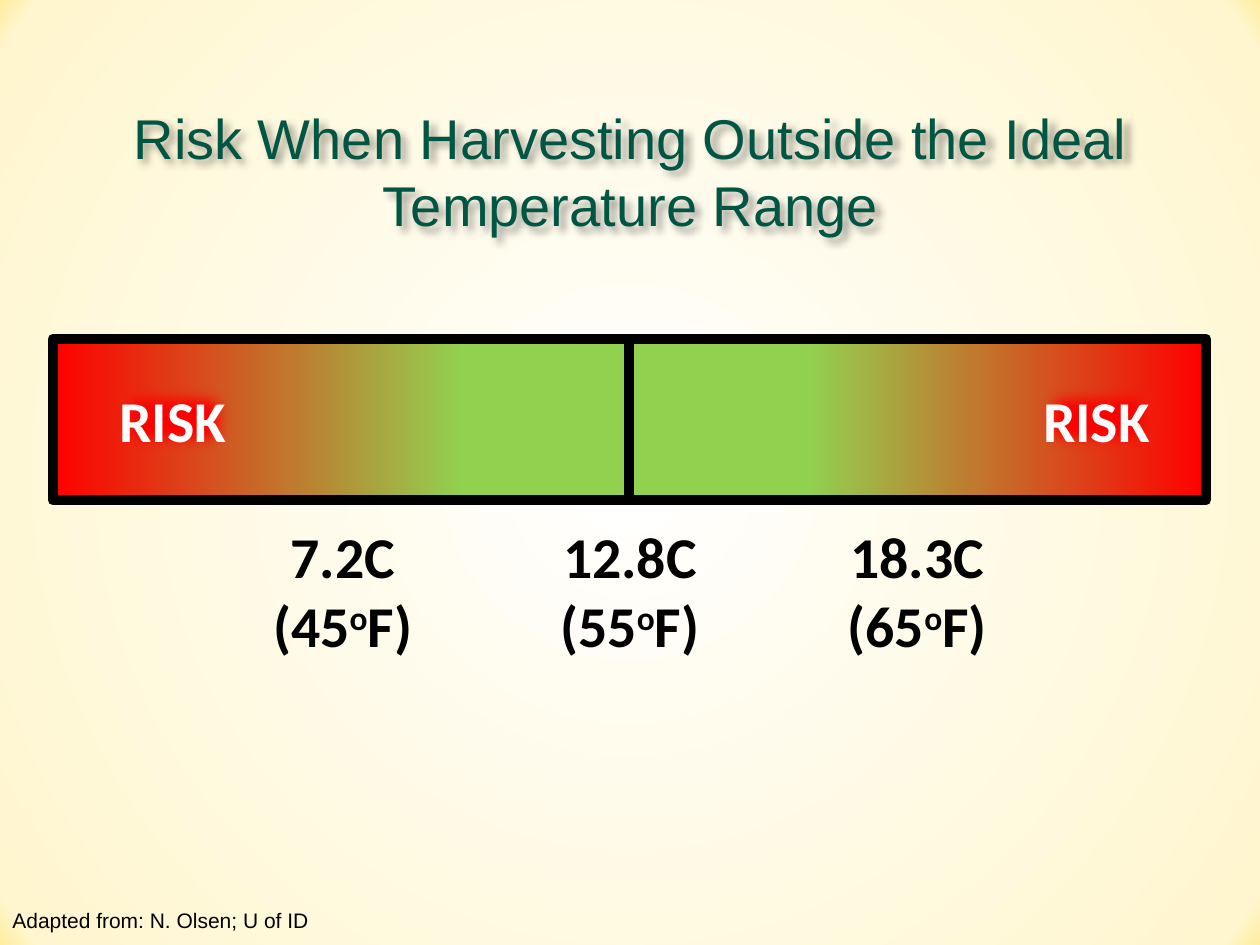
"""Build a slide showing harvest risk outside the ideal temperature range."""
import lxml.etree
import pptx
import pptx.dml.color
import pptx.enum.shapes
import pptx.enum.text
import pptx.oxml.ns
import pptx.util

qn = pptx.oxml.ns.qn
Inches = pptx.util.Inches
PP_ALIGN = pptx.enum.text.PP_ALIGN
RECTANGLE = pptx.enum.shapes.MSO_SHAPE.RECTANGLE


def add_xml(parent, tag, **attributes):
    return lxml.etree.SubElement(parent, qn(tag), attributes)


def write(frame, lines, size, font, color, bold=False, align=PP_ALIGN.LEFT):
    for index, line in enumerate(lines):
        paragraph = frame.paragraphs[0] if index == 0 else frame.add_paragraph()
        paragraph.alignment = align
        for text, baseline in line:
            run = paragraph.add_run()
            run.text = text
            run.font.size = pptx.util.Pt(size)
            run.font.name = font
            run.font.bold = bold
            run.font.color.rgb = pptx.dml.color.RGBColor.from_string(color)
            if baseline:
                run._r.get_or_add_rPr().set("baseline", str(baseline * 1000))


deck = pptx.Presentation()
deck.slide_width, deck.slide_height = Inches(10), Inches(7.5)
slide = deck.slides.add_slide(deck.slide_layouts[6])
shapes = slide.shapes

bar_left, bar_top, bar_width, bar_height = 0.42, 2.69, 4.58, 1.28
halves = [shapes.add_shape(RECTANGLE, Inches(bar_left + side * (bar_width - 0.01)),
                           Inches(bar_top), Inches(bar_width), Inches(bar_height))
          for side in range(2)]
for half in halves:
    half.shadow.inherit = False
    half.line.color.rgb = pptx.dml.color.RGBColor.from_string("000000")
    half.line.width = pptx.util.Pt(6)

gradients = [
    (slide.background, slide.element,
     [(0, "FFFFFF"), (96, "FFF6CF"), (100, "FFED9F"), (100, "FFC830")]),
    (halves[0], halves[0].element, [(0, "FF0000"), (71, "92D050"), (100, "92D050")]),
    (halves[1], halves[1].element, [(0, "92D050"), (31, "92D050"), (100, "FF0000")]),
]
for painted, element, stops in gradients:
    painted.fill.gradient()
    gradient = element.find(".//" + qn("a:gradFill"))
    for child in list(gradient):
        gradient.remove(child)
    stop_list = add_xml(gradient, "a:gsLst")
    for position, color in stops:
        stop = add_xml(stop_list, "a:gs", pos=str(position * 1000))
        add_xml(stop, "a:srgbClr", val=color)
    if painted in halves:
        add_xml(gradient, "a:lin", ang="0", scaled="0")
    else:
        circle = add_xml(gradient, "a:path", path="circle")
        add_xml(circle, "a:fillToRect", l="50000", t="50000", r="50000", b="50000")

for risk_left in (0.85, 8.18):
    risk = shapes.add_shape(RECTANGLE, Inches(risk_left), Inches(3), Inches(1.06), Inches(0.66))
    risk.fill.solid()
    risk.fill.fore_color.rgb = pptx.dml.color.RGBColor.from_string("FF0000")
    risk.line.fill.background()
    risk.shadow.inherit = False
    add_xml(risk.element.spPr.find(qn("a:effectLst")), "a:softEdge", rad="127000")
    risk.text_frame.word_wrap = False
    write(risk.text_frame, [[("RISK", 0)]], 33, "Calibri", "FFFFFF", True)

for column, (celsius, fahrenheit) in enumerate([("7.2C", "45"), ("12.8C", "55"), ("18.3C", "65")]):
    reading = shapes.add_textbox(Inches(2.05 + column * 2.28), Inches(4.08),
                                 Inches(1.34), Inches(1.21))
    reading.text_frame.word_wrap = False
    write(reading.text_frame,
          [[(celsius, 0)], [("(" + fahrenheit, 0), ("o", 30), ("F)", 0)]],
          33, "Calibri", "000000", True, PP_ALIGN.CENTER)

credit = shapes.add_textbox(0, Inches(7.15), Inches(2.58), Inches(0.3))
credit.text_frame.word_wrap = False
write(credit.text_frame, [[("Adapted from: N. Olsen; U of ID", 0)]], 12, "Arial", "000000")

title = shapes.add_textbox(Inches(0.51), Inches(0.76), Inches(8.99), Inches(1.18))
title.text_frame.word_wrap = True
title.text_frame.vertical_anchor = pptx.enum.text.MSO_ANCHOR.BOTTOM
write(title.text_frame, [[("Risk When Harvesting Outside the Ideal Temperature Range", 0)]],
      32, "Arial", "005643", align=PP_ALIGN.CENTER)
effects = add_xml(title.element.spPr, "a:effectLst")
shadow = add_xml(effects, "a:outerShdw", blurRad="50800", dist="38100", dir="2700000")
shade = add_xml(shadow, "a:srgbClr", val="000000")
add_xml(shade, "a:alpha", val="40000")

deck.save("out.pptx")
